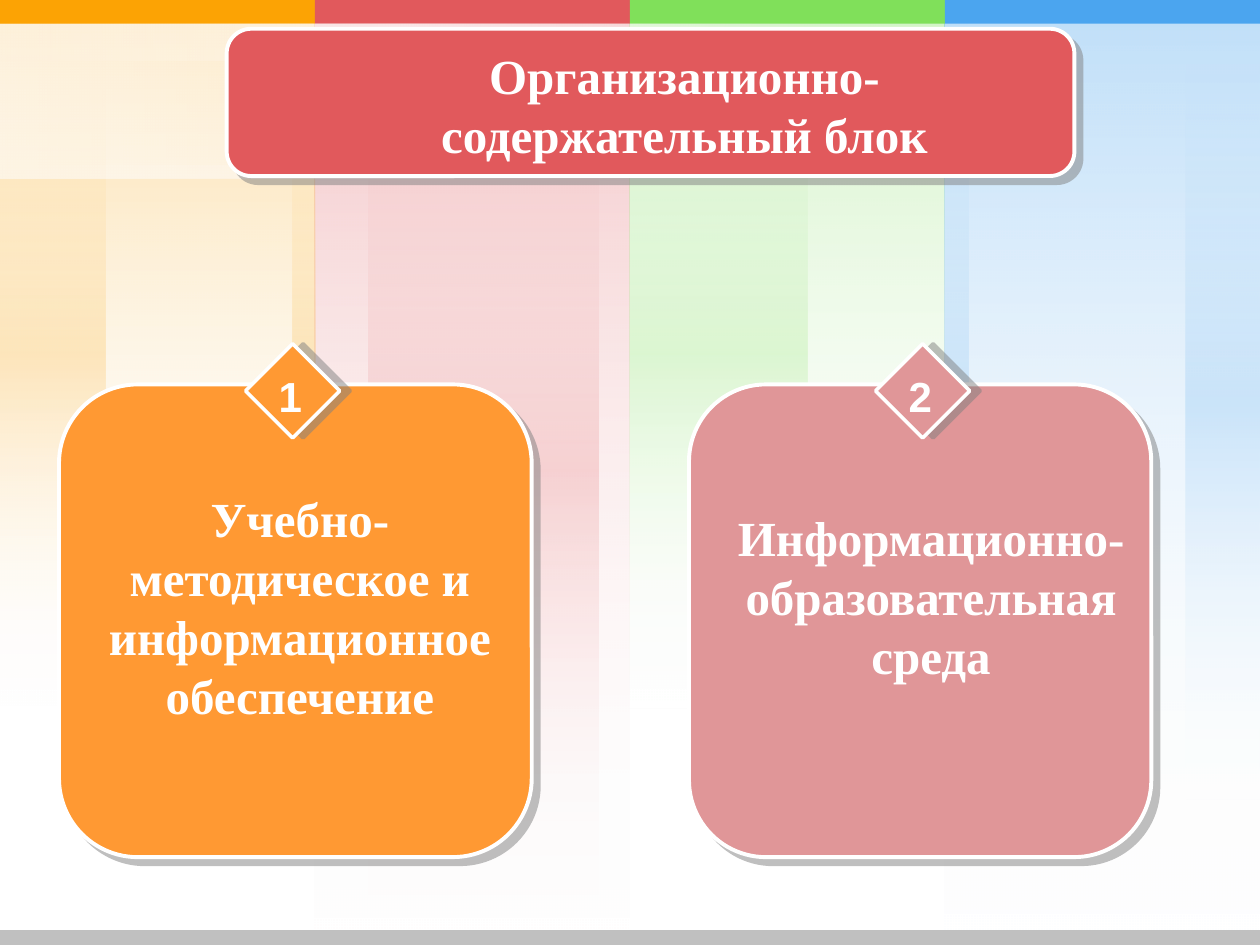
from lxml import etree
from pptx import Presentation
from pptx.dml.color import RGBColor
from pptx.enum import shapes, text
from pptx.oxml import parse_xml
from pptx.oxml.ns import nsdecls, qn
from pptx.util import Cm, Pt

COLORS = {
    "amber": "FCA304", "red": "E1595C", "green": "80E05A", "blue": "4BA5EF",
    "orange": "FF9933", "rose": "E09698", "white": "FFFFFF",
    "gray": "C0C0C0", "shade": "808080", "black": "000000",
}
COLUMN_W = 6.35
COLUMN_ORDER = ["amber", "red", "green", "blue"]
STRIPES = [
    ("red", [(0, 6.35, 19.05, "fade"), (1.07, 4.65, 19.05, "glow"), (0, 6.35, 19.05, "fade")]),
    ("green", [(0, 6.35, 14.28, "fade"), (0, 3.58, 14.28, "glow"), (0, 6.35, 14.28, "fade")]),
    ("blue", [(0, 0.48, 16.18, "glow"), (0, 6.35, 18.97, "fade"),
              (4.85, 1.5, 16.18, "glow"), (0, 6.35, 18.97, "fade")]),
    ("amber", [(0, 6.35, 14.28, "fade"), (5.89, 0.46, 14.28, "glow"),
               (0, 2.13, 14.28, "glow"), (0, 6.35, 14.28, "fade")]),
]
HIGHLIGHTS = [
    ((10.57, -7.24, 0.25, 21.39), "glow"),
    ((8, -7.49, 3.1, 19.08), "fade"),
    ((7.77, -7.29, 0.74, 16.28), "glow"),
    ((8, -7.49, 3.1, 19.08), "fade"),
]
TITLE = "Организационно-содержательный блок"
BANNER_BOX = (4.57, 0.58, 17.09, 2.97)
TITLE_BOX = (6.15, 0.79, 15.29, 2.64)
CARDS = [
    ("1", "Учебно-методическое и информационное обеспечение", "orange",
     (1.19, 7.75, 9.53, 9.53), (1.78, 9.73, 8.53, 5.05), 4.95),
    ("2", "Информационно-образовательная среда", "rose",
     (13.89, 7.75, 9.32, 9.53), (14.3, 10.11, 8.94, 3.84), 17.65),
]
HEADING = {"name": "Times New Roman", "size": Pt(28), "bold": True}
NUMBER = {"name": "Arial", "size": Pt(24), "bold": True}
FRAME = {"vertical_anchor": text.MSO_ANCHOR.TOP,
         "auto_size": text.MSO_AUTO_SIZE.SHAPE_TO_FIT_TEXT}


def rgb(name):
    return RGBColor.from_string(COLORS[name])


def add_shape(s, kind, box, color):
    sp = s.shapes.add_shape(kind, *map(Cm, box))
    sp.shadow.inherit = False
    sp.fill.solid()
    sp.fill.fore_color.rgb = rgb(color)
    sp.line.fill.background()
    return sp


def shadow_xml(color, alpha, distance, angle):
    return (f'<a:effectLst {nsdecls("a")}><a:outerShdw blurRad="0" dist="{int(Pt(distance))}" '
            f'dir="{angle * 60000}" algn="ctr" rotWithShape="0"><a:srgbClr val="{COLORS[color]}">'
            f'<a:alpha val="{alpha * 1000}"/></a:srgbClr></a:outerShdw></a:effectLst>')


def add_raised(s, kind, box, color, width, distance, angle):
    sp = add_shape(s, kind, box, color)
    sp.line.color.rgb = rgb("white")
    sp.line.width = Pt(width)
    props = sp.element.spPr
    props.replace(props.find(qn("a:effectLst")),
                  parse_xml(shadow_xml("shade", 50, distance, angle)))
    return sp


def add_gradient(s, box, color, style, opacity):
    sp = add_shape(s, shapes.MSO_SHAPE.RECTANGLE, box, color)
    stops = {"fade": [(0, color, opacity), (100, "white", 0)],
             "glow": [(0, "white", 0), (50, color, opacity), (100, "white", 0)]}[style]
    xml = "".join(f'<a:gs pos="{pos * 1000}"><a:srgbClr val="{COLORS[c]}">'
                  f'<a:alpha val="{alpha * 1000}"/></a:srgbClr></a:gs>'
                  for pos, c, alpha in stops)
    props = sp.element.spPr
    props.replace(props.find(qn("a:solidFill")), parse_xml(
        f'<a:gradFill {nsdecls("a")} rotWithShape="1"><a:gsLst>{xml}</a:gsLst>'
        '<a:lin ang="5400000" scaled="1"/></a:gradFill>'))
    return sp


def write(sp, content, font, wrap=True, shadow=True):
    tf = sp.text_frame
    for key, value in FRAME.items():
        setattr(tf, key, value)
    tf.word_wrap = wrap
    p = tf.paragraphs[0]
    p.alignment = text.PP_ALIGN.CENTER
    r = p.add_run()
    r.text = content
    for key, value in font.items():
        setattr(r.font, key, value)
    r.font.color.rgb = rgb("white")
    if shadow:
        fill = r.font.color and r.font.fill
        fill.solid()
        fill.fore_color.rgb = rgb("white")
        props = p.runs[0].font
        node = sp.element.find(".//" + qn("a:rPr"))
        node.find(qn("a:solidFill")).addnext(parse_xml(shadow_xml("black", 50, 2, 45)))


def add_text(s, box, content, font, **options):
    write(s.shapes.add_textbox(*map(Cm, box)), content, font, **options)


def add_background(s):
    for color, stripes in STRIPES:
        left = COLUMN_ORDER.index(color) * COLUMN_W
        for offset, width, height, style in stripes:
            add_gradient(s, (left + offset, 0, width, height), color, style, 20)
    for i, color in enumerate(COLUMN_ORDER):
        add_shape(s, shapes.MSO_SHAPE.RECTANGLE, (i * COLUMN_W, 0, COLUMN_W, 0.48), color)
    for box, style in HIGHLIGHTS:
        add_gradient(s, box, "white", style, 35).rotation = 270
    add_shape(s, shapes.MSO_SHAPE.RECTANGLE, (0, 18.75, 25.4, 0.3), "gray")


def main():
    prs = Presentation()
    prs.slide_width, prs.slide_height = Cm(25.4), Cm(19.05)
    s = prs.slides.add_slide(prs.slide_layouts[5])
    add_background(s)

    rounded, diamond = shapes.MSO_SHAPE.ROUNDED_RECTANGLE, shapes.MSO_SHAPE.DIAMOND
    for number, label, color, card_box, label_box, badge_left in CARDS:
        add_raised(s, rounded, card_box, color, 2.25, 5.7, 45)
        add_text(s, label_box, label, HEADING)
        add_raised(s, diamond, (badge_left, 6.93, 1.9, 1.9), color, 2, 6, 0)
        add_text(s, (badge_left + 0.41, 7.34, 0.99, 1.27), number, NUMBER,
                 wrap=False, shadow=False)

    add_raised(s, rounded, BANNER_BOX, "red", 2.25, 5.7, 45)
    title = s.shapes.title
    for key, value in zip(("left", "top", "width", "height"), TITLE_BOX):
        setattr(title, key, Cm(value))
    write(title, TITLE, HEADING)
    s.shapes.element.append(title.element)

    prs.save("out.pptx")


if __name__ == "__main__":
    main()
